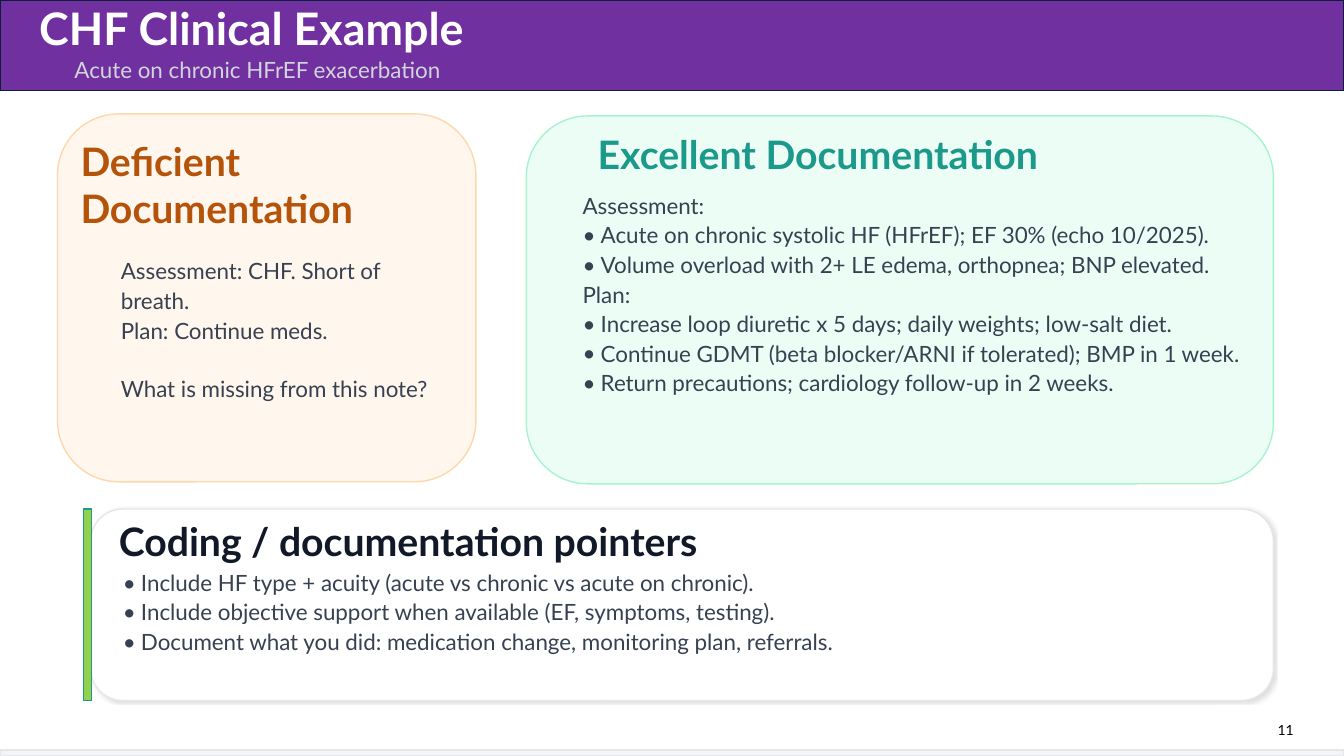
from lxml.etree import SubElement
from pptx import Presentation
from pptx.dml.color import RGBColor
from pptx.enum.shapes import MSO_SHAPE
from pptx.enum.text import MSO_ANCHOR, PP_ALIGN
from pptx.oxml.ns import qn
from pptx.util import Inches, Pt

FONT = "Lato"
BODY = "374151"
RECT, ROUND = MSO_SHAPE.RECTANGLE, MSO_SHAPE.ROUNDED_RECTANGLE


def color(code):
    return RGBColor.from_string(code)


def panel(slide, kind, box, fill, line):
    """Filled and outlined shape without a shadow."""
    shape = slide.shapes.add_shape(kind, *map(Inches, box))
    shape.shadow.inherit = False
    shape.fill.solid()
    shape.fill.fore_color.rgb = color(fill)
    shape.line.color.rgb = color(line)
    shape.line.width = Pt(1)
    return shape


def soften(shape):
    """Faint shadow to the lower right."""
    effects = shape._element.spPr.find(qn("a:effectLst"))
    shadow = SubElement(effects, qn("a:outerShdw"), blurRad=str(Pt(2)),
                        dist=str(Pt(1)), dir=str(45 * 60000), algn="ctr", rotWithShape="0")
    tint = SubElement(shadow, qn("a:srgbClr"), val="000000")
    SubElement(tint, qn("a:alpha"), val="12000")


def bullet(para):
    props = para._p.get_or_add_pPr()
    indent = Inches(0.18)
    props.set("marL", str(indent))
    props.set("indent", str(-indent))
    SubElement(props, qn("a:buFont"), typeface=FONT)
    SubElement(props, qn("a:buChar"), char="•")


def style(para, size, ink, bold=False):
    font = para.font
    font.name, font.size, font.bold = FONT, Pt(size), bold
    font.color.rgb = color(ink)


def frame(slide, box):
    text = slide.shapes.add_textbox(*map(Inches, box)).text_frame
    text.word_wrap = True
    return text


def label(slide, box, words, size, ink, bold=False, align=PP_ALIGN.LEFT):
    """Single paragraph, centred vertically."""
    text = frame(slide, box)
    text.vertical_anchor = MSO_ANCHOR.MIDDLE
    para = text.paragraphs[0]
    para.text = words
    para.alignment = align
    style(para, size, ink, bold)


def body(slide, box, lines):
    """Body copy; a line that starts with "-" gets a bullet."""
    text = frame(slide, box)
    for i, line in enumerate(lines):
        para = text.add_paragraph() if i else text.paragraphs[0]
        para.text = line.removeprefix("-")
        if line.startswith("-"):
            bullet(para)
        para.line_spacing = 1.1
        style(para, 16, BODY)
    return text


def main():
    deck = Presentation()
    deck.slide_width, deck.slide_height = Inches(13.33), Inches(7.5)
    slide = deck.slides.add_slide(deck.slide_layouts[6])

    # Header
    panel(slide, RECT, (0, 0, 13.33, 0.9), "7030A0", "0B1F3A")
    label(slide, (0.29, 0.11, 12.13, 0.32), "CHF Clinical Example", 32, "FFFFFF", True)
    label(slide, (0.64, 0.53, 12.05, 0.32), "Acute on chronic HFrEF exacerbation",
          16, "D1D5DB")

    # Deficient note
    panel(slide, ROUND, (0.57, 1.13, 4.15, 3.65), "FFF7ED", "FED7AA")
    label(slide, (0.7, 1.68, 3.89, 0.3), "Deficient Documentation", 28, "B45309", True)
    note = body(slide, (1.1, 2.48, 3.41, 2.95), [
        "Assessment: CHF. Short of breath.",
        "Plan: Continue meds.",
        "What is missing from this note?",
    ])
    note.paragraphs[-1].space_before = Pt(21)

    # Excellent note
    panel(slide, ROUND, (5.22, 1.15, 7.41, 3.65), "ECFDF5", "A7F3D0")
    label(slide, (5.83, 1.38, 5.69, 0.3), "Excellent Documentation", 28, "1B998B", True)
    body(slide, (5.68, 1.83, 6.85, 2.95), [
        "Assessment:",
        "-Acute on chronic systolic HF (HFrEF); EF 30% (echo 10/2025).",
        "-Volume overload with 2+ LE edema, orthopnea; BNP elevated.",
        "Plan:",
        "-Increase loop diuretic x 5 days; daily weights; low‑salt diet.",
        "-Continue GDMT (beta blocker/ARNI if tolerated); BMP in 1 week.",
        "-Return precautions; cardiology follow‑up in 2 weeks.",
    ])

    # Coding pointers
    soften(panel(slide, ROUND, (0.9, 5.05, 11.73, 1.9), "FFFFFF", "E5E7EB"))
    panel(slide, RECT, (0.83, 5.05, 0.08, 1.9), "92D050", "1B998B")
    label(slide, (1.08, 5.23, 12.15, 0.28), "Coding / documentation pointers",
          28, "111827", True)
    body(slide, (1.12, 5.57, 12.11, 1.28), [
        "-Include HF type + acuity (acute vs chronic vs acute on chronic).",
        "-Include objective support when available (EF, symptoms, testing).",
        "-Document what you did: medication change, monitoring plan, referrals.",
    ])

    # Footer
    panel(slide, RECT, (0, 7.44, 13.33, 0.06), "F3F4F6", "E5E7EB")
    label(slide, (12.53, 7.13, 0.4, 0.22), "11", 10, "000000", align=PP_ALIGN.RIGHT)

    deck.save("out.pptx")


if __name__ == "__main__":
    main()
